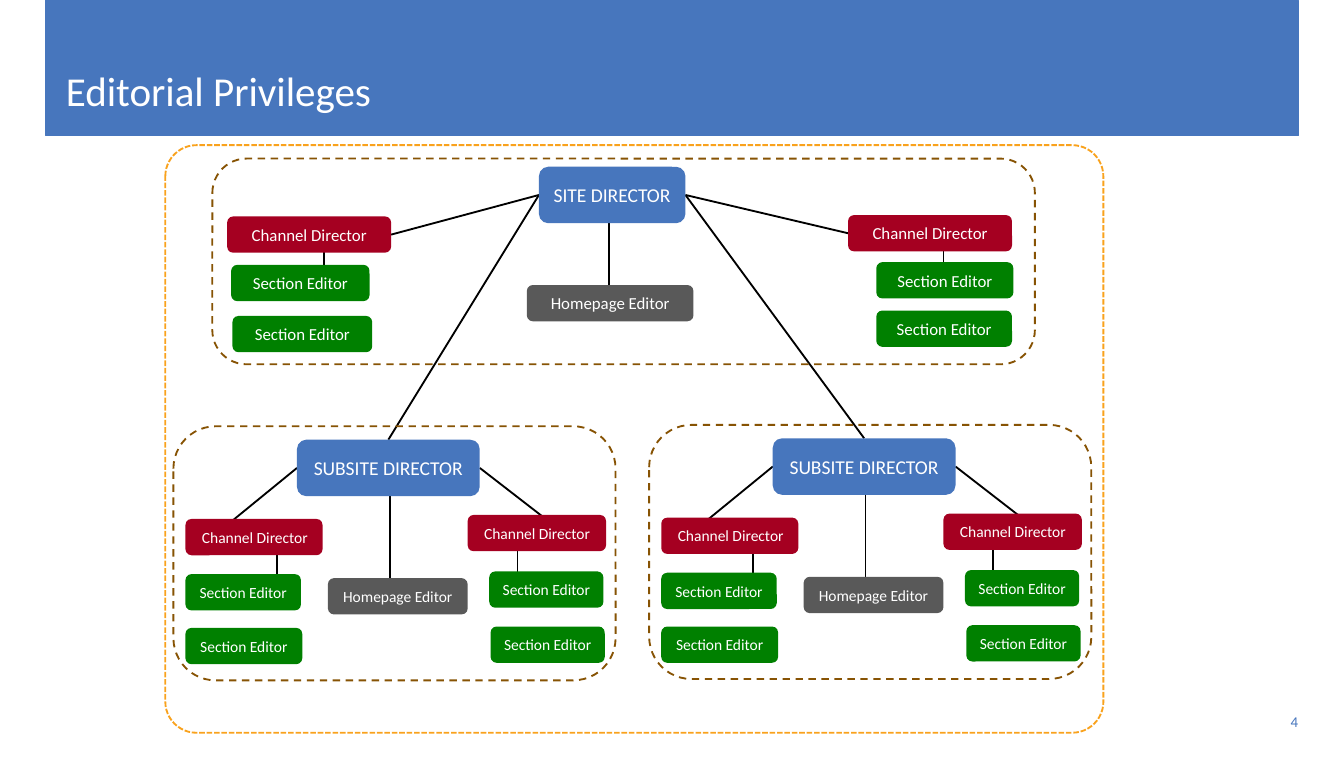
from dataclasses import dataclass, replace
from typing import Optional

from lxml.etree import SubElement
from pptx import Presentation
from pptx.dml.color import RGBColor
from pptx.enum.dml import MSO_LINE
from pptx.enum.shapes import MSO_CONNECTOR as CONN, MSO_SHAPE as SHAPE
from pptx.enum.text import MSO_ANCHOR as ANCHOR, PP_ALIGN as ALIGN
from pptx.oxml.ns import qn
from pptx.util import Pt

PX = 9144
FONT = "Calibri"
BLUE = RGBColor(0x47, 0x76, 0xBD)
RED = RGBColor(0xA5, 0x00, 0x21)
GREEN = RGBColor(0x00, 0x80, 0x00)
GRAY = RGBColor(0x59, 0x59, 0x59)
ORANGE = RGBColor(0xF9, 0xA2, 0x1D)
BROWN = RGBColor(0x87, 0x53, 0x04)
BLACK = RGBColor(0x00, 0x00, 0x00)
WHITE = RGBColor(0xFF, 0xFF, 0xFF)
TOP, LEFT, BOTTOM, RIGHT = range(4)


@dataclass(frozen=True)
class Role:
    title: str
    fill: RGBColor
    size: float
    h: int = 27
    align: ALIGN = ALIGN.CENTER


@dataclass(frozen=True)
class Box:
    role: Role
    x: int
    y: int
    w: int


@dataclass(frozen=True)
class Frame:
    x: int
    y: int
    w: int
    h: int
    color: RGBColor = BROWN
    dash: MSO_LINE = MSO_LINE.DASH
    radius: Optional[float] = None


@dataclass(frozen=True)
class Line:
    x1: int
    y1: int
    x2: int
    y2: int
    side: Optional[int] = None


SITE = Role("SITE DIRECTOR", BLUE, 10.5, h=42)
SUBSITE = Role("SUBSITE DIRECTOR", BLUE, 10.5, h=42)
CHANNEL = Role("Channel Director", RED, 9)
SECTION = Role("Section Editor", GREEN, 9)
HOMEPAGE = Role("Homepage Editor", GRAY, 9)
SUB_CHANNEL = replace(CHANNEL, size=8.3, align=ALIGN.LEFT)
SUB_SECTION = replace(SECTION, size=8.3)
SUB_HOMEPAGE = replace(HOMEPAGE, size=8.3)

SITE_BOXES = [
    Box(SITE, 401, 124, 109),
    Box(CHANNEL, 169, 161, 122),
    Box(CHANNEL, 631, 160, 122),
    Box(SECTION, 652, 195, 102),
    Box(SECTION, 652, 231, 101),
    Box(SECTION, 172, 197, 103),
    Box(SECTION, 173, 235, 104),
    Box(HOMEPAGE, 392, 212, 124),
]
SITE_LINES = [
    Line(702, 173, 702, 220),
    Line(241, 172, 241, 219),
    Line(453, 128, 453, 219),
]
SUBSITE_BOXES = [
    Box(SUBSITE, 221, 327, 136),
    Box(SUB_CHANNEL, 138, 386, 102),
    Box(SUB_CHANNEL, 348, 383, 103),
    Box(SUB_SECTION, 364, 425, 85),
    Box(SUB_SECTION, 365, 466, 85),
    Box(SUB_SECTION, 138, 427, 86),
    Box(SUB_SECTION, 138, 467, 87),
    Box(SUB_HOMEPAGE, 244, 430, 104),
]
SUBSITE_LINES = [
    Line(385, 398, 385, 445),
    Line(206, 394, 206, 441),
    Line(290, 351, 290, 441),
    Line(357, 348, 419, 396, RIGHT),
    Line(221, 348, 161, 397, LEFT),
]
SUBSITE_FRAME = Frame(129, 317, 329, 189)
SUBSITE_SHIFTS = [(0, 0), (354, -1)]

prs = Presentation()
prs.slide_width, prs.slide_height = 1000 * PX, 563 * PX
s = prs.slides.add_slide(prs.slide_layouts[5])


def write(tf, text: str, *, size: float, color: RGBColor, align=ALIGN.LEFT,
          anchor=ANCHOR.MIDDLE, inset: int = 0, wrap: bool = False, spacing: float = 1.0) -> None:
    tf.margin_left = tf.margin_right = tf.margin_top = tf.margin_bottom = inset * PX
    tf.word_wrap, tf.vertical_anchor = wrap, anchor
    p = tf.paragraphs[0]
    p.alignment, p.line_spacing = align, spacing
    r = p.add_run()
    r.text = text
    r.font.name, r.font.size = FONT, Pt(size)
    r.font.color.rgb = color


def add_shape(kind: SHAPE, x: int, y: int, w: int, h: int, fill: Optional[RGBColor] = None):
    sp = s.shapes.add_shape(kind, x * PX, y * PX, w * PX, h * PX)
    sp.shadow.inherit = False
    sp.line.fill.background()
    if fill is None:
        sp.fill.background()
    else:
        sp.fill.solid()
        sp.fill.fore_color.rgb = fill
    return sp


def draw_box(b: Box, dx: int = 0, dy: int = 0):
    sp = add_shape(SHAPE.ROUNDED_RECTANGLE, b.x + dx, b.y + dy, b.w, b.role.h, b.role.fill)
    write(sp.text_frame, b.role.title, size=b.role.size, color=WHITE, align=b.role.align, inset=11)
    return sp


def draw_frame(f: Frame, dx: int = 0, dy: int = 0) -> None:
    sp = add_shape(SHAPE.ROUNDED_RECTANGLE, f.x + dx, f.y + dy, f.w, f.h)
    if f.radius is not None:
        sp.adjustments[0] = f.radius
    sp.line.color.rgb, sp.line.width, sp.line.dash_style = f.color, Pt(1), f.dash


def draw_line(x1: int, y1: int, x2: int, y2: int):
    c = s.shapes.add_connector(CONN.STRAIGHT, x1 * PX, y1 * PX, x2 * PX, y2 * PX)
    c.line.color.rgb, c.line.width = BLACK, Pt(1)
    SubElement(c._element.spPr, qn("a:effectLst"))
    banner._element.addnext(c._element)
    return c


def draw_team(boxes: list[Box], lines: list[Line], frame: Frame, dx: int = 0, dy: int = 0) -> list:
    shapes = [draw_box(b, dx, dy) for b in boxes]
    for ln in lines:
        c = draw_line(ln.x1 + dx, ln.y1 + dy, ln.x2 + dx, ln.y2 + dy)
        if ln.side is not None:
            c.begin_connect(shapes[0], ln.side)
    draw_frame(frame, dx, dy)
    return shapes


def join(start, start_side: int, end, end_side: int) -> None:
    c = draw_line(0, 0, 0, 0)
    c.begin_connect(start, start_side)
    c.end_connect(end, end_side)


banner = add_shape(SHAPE.RECTANGLE, 34, 0, 932, 101, BLUE)
banner.line.color.rgb, banner.line.width = BLUE, Pt(0.5)

title = s.shapes.title
title.left, title.top, title.width, title.height = 49 * PX, 23 * PX, 902 * PX, 63 * PX
write(title.text_frame, "Editorial Privileges", size=22, color=WHITE,
      anchor=ANCHOR.BOTTOM, wrap=True, spacing=0.9)
banner._element.addnext(title._element)

number = s.shapes.add_textbox(866 * PX, 522 * PX, 100 * PX, 30 * PX)
write(number.text_frame, "4", size=8, color=BLUE, align=ALIGN.RIGHT)

draw_frame(Frame(123, 108, 698, 437, ORANGE, MSO_LINE.SQUARE_DOT, 0.053))
director, left_channel, right_channel, *_ = draw_team(
    SITE_BOXES, SITE_LINES, Frame(158, 118, 612, 153))
left_sub, right_sub = [
    draw_team(SUBSITE_BOXES, SUBSITE_LINES, SUBSITE_FRAME, dx, dy)[0] for dx, dy in SUBSITE_SHIFTS]

join(director, LEFT, left_channel, RIGHT)
join(director, RIGHT, right_channel, LEFT)
join(director, LEFT, left_sub, TOP)
join(director, RIGHT, right_sub, TOP)

prs.save("out.pptx")
